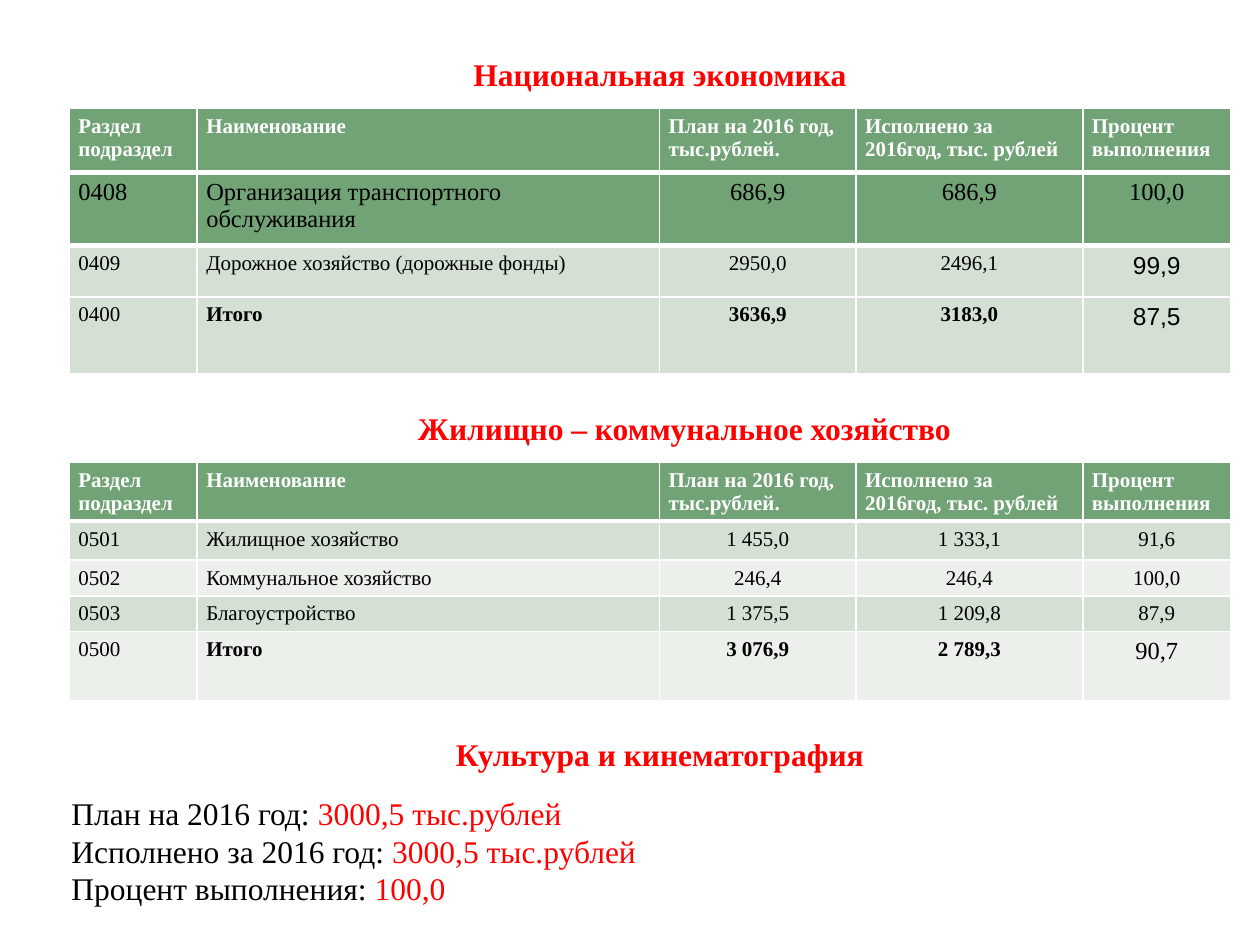
import pptx
import pptx.util
import pptx.dml.color
import pptx.enum.text
import pptx.oxml
from pptx.oxml.ns import nsdecls

Pt = pptx.util.Pt
ALIGN = pptx.enum.text.PP_ALIGN
HUES = {"head": "72A376", "band": "D5E0D5", "pale": "EBF0EB",
        "white": "FFFFFF", "black": "000000", "red": "FF0000"}
SERIF, SANS = "Times New Roman", "Arial"
LEFT = 39.6
COLS = [73.1, 264.2, 112.3, 129.6, 84.6]
THIN, THICK = 0.96, 3
TOTAL = "Итого"
HEADS = ["Раздел подраздел", "Наименование", "План на 2016 год, тыс.рублей.",
         "Исполнено за 2016год, тыс. рублей", "Процент\nвыполнения"]

ECON = [
    (36.7, "head", 12, (12, SERIF), HEADS),
    (41.8, "head", 14, (14, SERIF),
     ["0408", "Организация транспортного обслуживания", "686,9", "686,9", "100,0"]),
    (29.2, "band", 12, (14, SANS),
     ["0409", "Дорожное хозяйство (дорожные фонды)", "2950,0", "2496,1", "99,9"]),
    (43.9, "band", 12, (14, SANS), ["0400", TOTAL, "3636,9", "3183,0", "87,5"]),
]
HOUSING = [
    (33.1, "head", 12, (12, SERIF), HEADS),
    (22.3, "band", 12, (12, SERIF),
     ["0501", "Жилищное хозяйство", "1 455,0", "1 333,1", "91,6"]),
    (20.5, "pale", 12, (12, SERIF),
     ["0502", "Коммунальное хозяйство", "246,4", "246,4", "100,0"]),
    (20.5, "band", 12, (12, SERIF),
     ["0503", "Благоустройство", "1 375,5", "1 209,8", "87,9"]),
    (39.6, "pale", 12, (14, SERIF), ["0500", TOTAL, "3 076,9", "2 789,3", "90,7"]),
]
FACTS = [("План на 2016 год: ", "3000,5 тыс.рублей"),
         ("Исполнено за 2016 год: ", "3000,5 тыс.рублей"),
         ("Процент выполнения: ", "100,0")]


def color(name):
    return pptx.dml.color.RGBColor.from_string(HUES[name])


def style(font, size, hue, bold=False, face=SERIF):
    font.name, font.size, font.bold = face, Pt(size), bold
    font.color.rgb = color(hue)


def edge(cell, top, base):
    props = cell._tc.get_or_add_tcPr()
    sides = [("L", THIN), ("R", THIN), ("T", top), ("B", base)]
    for spot, (side, width) in enumerate(sides):
        line = pptx.oxml.parse_xml(
            f'<a:ln{side} {nsdecls("a")} w="{int(Pt(width))}"><a:solidFill>'
            f'<a:srgbClr val="{HUES["white"]}"/></a:solidFill></a:ln{side}>')
        props.insert(spot, line)


def add_grid(slide, top, rows, heavy):
    height = sum(row[0] for row in rows)
    frame = slide.shapes.add_table(len(rows), len(COLS), Pt(LEFT), Pt(top),
                                   Pt(sum(COLS)), Pt(height))
    table = frame.table
    table.first_row = table.horz_banding = False
    for col, width in zip(table.columns, COLS):
        col.width = Pt(width)
    for r, (tall, fill, size, last, texts) in enumerate(rows):
        table.rows[r].height = Pt(tall)
        for c, text in enumerate(texts):
            cell = table.cell(r, c)
            cell.margin_left = cell.margin_right = Pt(5.2)
            cell.margin_top, cell.margin_bottom = Pt(3.6), Pt(1)
            cell.fill.solid()
            cell.fill.fore_color.rgb = color(fill)
            edge(cell, THICK if r - 1 in heavy else THIN,
                 THICK if r in heavy else THIN)
            cell.text = text
            points, face = last if c == 4 else (size, SERIF)
            bold = r == 0 or (texts[1] == TOTAL and 0 < c < 4)
            for para in cell.text_frame.paragraphs:
                para.alignment = ALIGN.CENTER if r and c > 1 else ALIGN.LEFT
                style(para.font, points, "black" if r else "white", bold, face)


def add_box(slide, left, top, width, height, wrap):
    box = slide.shapes.add_textbox(Pt(left), Pt(top), Pt(width), Pt(height))
    box.text_frame.word_wrap = wrap
    return box.text_frame


def add_title(slide, text, left, top, width, height, wrap=False):
    para = add_box(slide, left, top, width, height, wrap).paragraphs[0]
    para.text = text
    style(para.font, 18, "red", True)


def add_facts(slide):
    frame = add_box(slide, 33.8, 450, 489.6, 73.4, True)
    for n, (label, value) in enumerate(FACTS):
        para = frame.add_paragraph() if n else frame.paragraphs[0]
        para.alignment = ALIGN.LEFT if n else ALIGN.JUSTIFY
        for text, hue in ((label, "black"), (value, "red")):
            run = para.add_run()
            run.text = text
            style(run.font, 18, hue)


def main():
    deck = pptx.Presentation()
    deck.slide_width, deck.slide_height = Pt(720), Pt(540)
    slide = deck.slides.add_slide(deck.slide_layouts[6])
    add_grid(slide, 62, ECON, {0, 1})
    add_title(slide, "Национальная экономика", 263.5, 28.1, 232, 50.4)
    add_grid(slide, 264.3, HOUSING, {0})
    add_title(slide, "Жилищно – коммунальное хозяйство", 231.8, 230.4, 324, 33.8)
    add_title(slide, "Культура и кинематография", 253.4, 416.2, 314.6, 33.8, True)
    add_facts(slide)
    deck.save("out.pptx")


if __name__ == "__main__":
    main()
